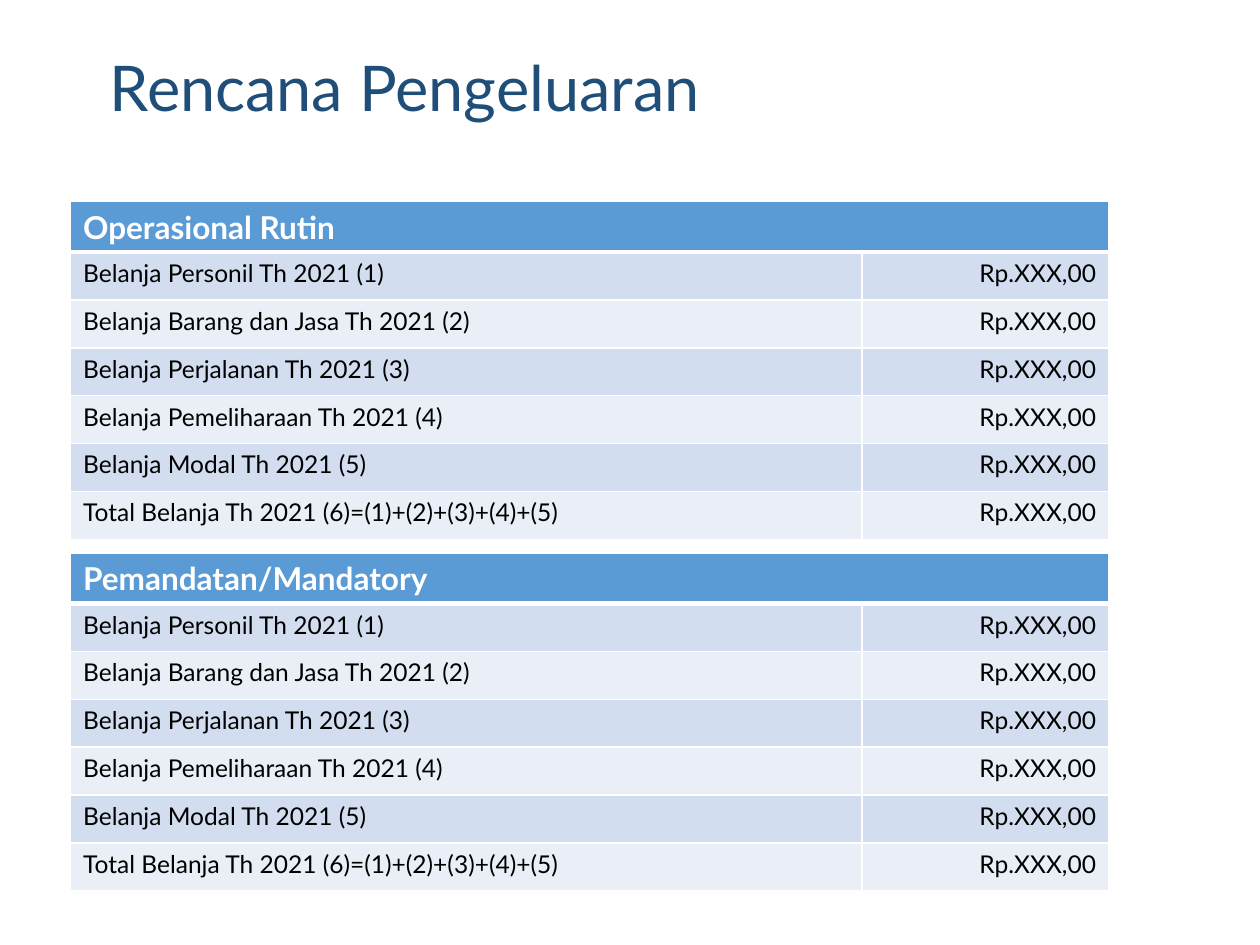
from dataclasses import dataclass

from lxml import etree
from pptx import Presentation
from pptx.dml.color import RGBColor
from pptx.enum.text import MSO_ANCHOR, PP_ALIGN
from pptx.oxml.ns import qn
from pptx.util import Inches, Pt

LEFT, RIGHT = PP_ALIGN.LEFT, PP_ALIGN.RIGHT
MIDDLE = MSO_ANCHOR.MIDDLE
FONT = "Lato"
COLORS = {
    "title": "1F4E79",
    "header": "5B9BD5",
    "odd": "D2DEEF",
    "even": "EAEFF7",
    "white": "FFFFFF",
    "text": "000000",
}
ITEMS = (
    "Belanja Personil Th 2021 (1)",
    "Belanja Barang dan Jasa Th 2021 (2)",
    "Belanja Perjalanan Th 2021 (3)",
    "Belanja Pemeliharaan Th 2021 (4)",
    "Belanja Modal Th 2021 (5)",
    "Total Belanja Th 2021 (6)=(1)+(2)+(3)+(4)+(5)",
)
AMOUNT = "Rp.XXX,00"
TABLE_LEFT = 0.56
COLUMN_WIDTHS = (6.28, 1.96)
HEADER_HEIGHT, ROW_HEIGHT = 0.39, 0.38


@dataclass(frozen=True)
class Budget:
    heading: str
    top: float


BUDGETS = (Budget("Operasional Rutin", 1.6), Budget("Pemandatan/Mandatory", 4.39))


def rgb(name: str) -> RGBColor:
    return RGBColor.from_string(COLORS[name])


def add_run(p, text: str, size: int, color: str, bold: bool = False) -> None:
    r = p.add_run()
    r.text = text
    r.font.name = FONT
    r.font.size = Pt(size)
    r.font.bold = bold
    r.font.color.rgb = rgb(color)


def style_cell(cell, fill: str, top: int = 1, bottom: int = 1) -> None:
    tc_pr = cell._tc.get_or_add_tcPr()
    for tag, width in (("lnL", 1), ("lnR", 1), ("lnT", top), ("lnB", bottom)):
        line = etree.SubElement(tc_pr, qn(f"a:{tag}"), w=str(Pt(width)))
        solid = etree.SubElement(line, qn("a:solidFill"))
        etree.SubElement(solid, qn("a:srgbClr"), val=COLORS["white"])
    cell.fill.solid()
    cell.fill.fore_color.rgb = rgb(fill)


def add_budget(s, budget: Budget) -> None:
    height = HEADER_HEIGHT + ROW_HEIGHT * len(ITEMS)
    table = s.shapes.add_table(
        len(ITEMS) + 1, len(COLUMN_WIDTHS),
        Inches(TABLE_LEFT), Inches(budget.top),
        Inches(sum(COLUMN_WIDTHS)), Inches(height),
    ).table
    for column, width in zip(table.columns, COLUMN_WIDTHS):
        column.width = Inches(width)
    for i, row in enumerate(table.rows):
        row.height = Inches(ROW_HEIGHT if i else HEADER_HEIGHT)

    for cell in table.rows[0].cells:
        style_cell(cell, "header", bottom=3)
    header = table.cell(0, 0)
    header.merge(table.cell(0, 1))
    add_run(header.text_frame.paragraphs[0], budget.heading, 18, "white", True)

    for i, item in enumerate(ITEMS, start=1):
        for j, (text, align) in enumerate(((item, LEFT), (AMOUNT, RIGHT))):
            cell = table.cell(i, j)
            style_cell(cell, "odd" if i % 2 else "even", top=3 if i == 1 else 1)
            p = cell.text_frame.paragraphs[0]
            p.alignment = align
            add_run(p, text, 14, "text")


def add_title(s, text: str) -> None:
    title = s.shapes.title
    title.left, title.top = Inches(0.77), Inches(0)
    title.width, title.height = Inches(8.62), Inches(1.45)
    tf = title.text_frame
    tf.vertical_anchor = MIDDLE
    p = tf.paragraphs[0]
    p.alignment = LEFT
    p.line_spacing = 0.9
    add_run(p, text, 36, "title")


def main() -> None:
    prs = Presentation()
    prs.slide_width, prs.slide_height = Inches(10), Inches(7.5)
    s = prs.slides.add_slide(prs.slide_layouts[5])
    add_title(s, "Rencana Pengeluaran")
    for budget in BUDGETS:
        add_budget(s, budget)
    prs.save("out.pptx")


if __name__ == "__main__":
    main()
